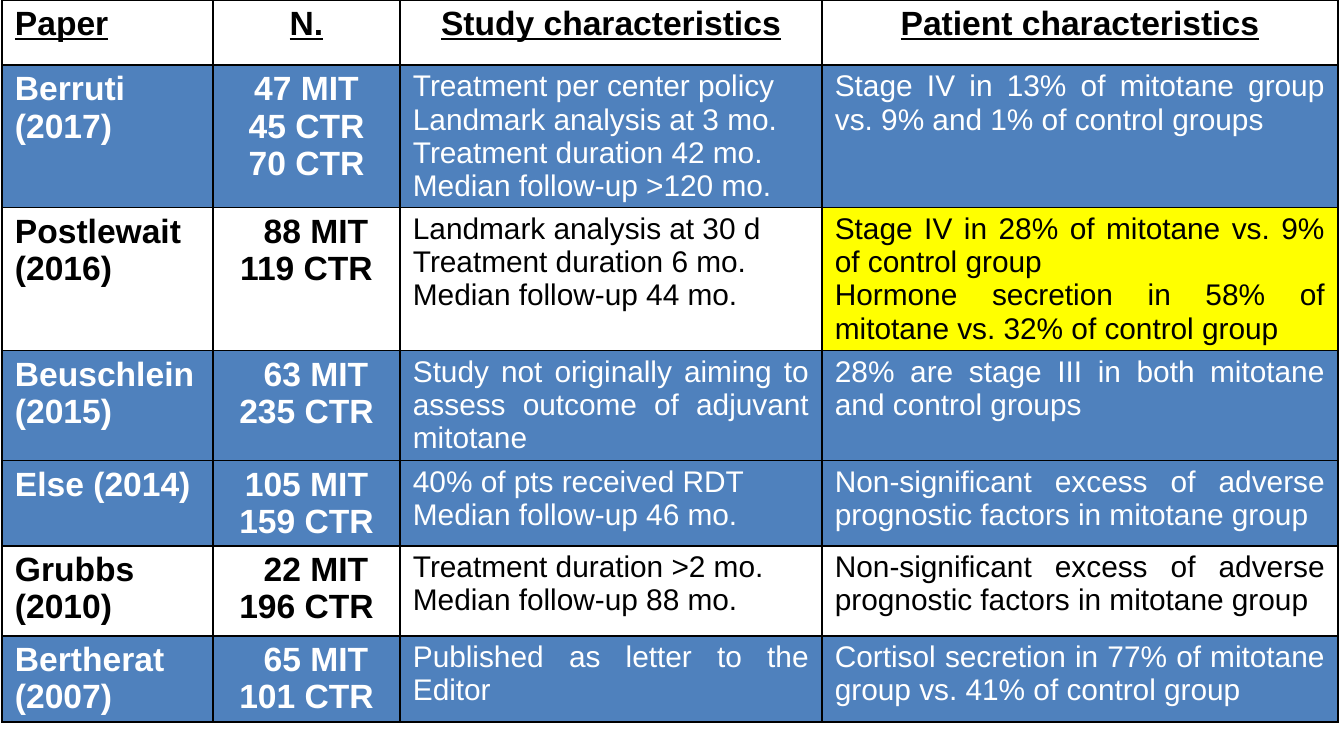
from dataclasses import dataclass

from lxml import etree
from pptx import Presentation
from pptx.dml.color import RGBColor
from pptx.enum.text import PP_ALIGN
from pptx.oxml.ns import qn
from pptx.util import Pt

LEFT, CENTER, JUSTIFY = PP_ALIGN.LEFT, PP_ALIGN.CENTER, PP_ALIGN.JUSTIFY
EMU_PER_PX = 914400 / 134.4
WHITE, BLACK, BLUE, YELLOW = "FFFFFF", "000000", "4F81BD", "FFFF00"
COL_WIDTHS = [211, 187, 422, 516]
ROW_HEIGHTS = [65, 142, 143, 110, 85, 90, 86]
DIGIT_INDENT = 19  # evens out a count that is one digit shorter


@dataclass
class Study:
    paper: str
    counts: list[str]
    design: list[str]
    patients: list[str]
    fill: str = BLUE
    patients_fill: str = BLUE


HEADERS = ["Paper", "N.", "Study characteristics", "Patient characteristics"]
EXCESS = "Non-significant excess of adverse prognostic factors in mitotane group"
STUDIES = [
    Study("Berruti (2017)", ["47 MIT", "45 CTR", "70 CTR"],
          ["Treatment per center policy", "Landmark analysis at 3 mo.",
           "Treatment duration 42 mo.", "Median follow-up >120 mo."],
          ["Stage IV in 13% of mitotane group vs. 9% and 1% of control groups"]),
    Study("Postlewait (2016)", ["88 MIT", "119 CTR"],
          ["Landmark analysis at 30 d", "Treatment duration 6 mo.",
           "Median follow-up 44 mo."],
          ["Stage IV in 28% of mitotane vs. 9% of control group",
           "Hormone secretion in 58% of mitotane vs. 32% of control group"],
          WHITE, YELLOW),
    Study("Beuschlein (2015)", ["63 MIT", "235 CTR"],
          ["Study not originally aiming to assess outcome of adjuvant mitotane"],
          ["28% are stage III in both mitotane and control groups"]),
    Study("Else (2014)", ["105 MIT", "159 CTR"],
          ["40% of pts received RDT", "Median follow-up 46 mo."], [EXCESS]),
    Study("Grubbs (2010)", ["22 MIT", "196 CTR"],
          ["Treatment duration >2 mo.", "Median follow-up 88 mo."], [EXCESS],
          WHITE, WHITE),
    Study("Bertherat (2007)", ["65 MIT", "101 CTR"],
          ["Published as letter to the Editor"],
          ["Cortisol secretion in 77% of mitotane group vs. 41% of control group"]),
]


def px(n: int) -> int:
    return round(n * EMU_PER_PX)


def rgb(color: str) -> RGBColor:
    return RGBColor.from_string(color)


def add_borders(cell) -> None:
    tc_pr = cell._tc.get_or_add_tcPr()
    for side in ("a:lnL", "a:lnR", "a:lnT", "a:lnB"):
        ln = etree.SubElement(tc_pr, qn(side), w=str(Pt(1)))
        fill = etree.SubElement(ln, qn("a:solidFill"))
        etree.SubElement(fill, qn("a:srgbClr"), val=BLACK)


def fill_cell(cell, lines: list[str], fill: str, align, size: int = 18,
              bold: bool = True, underline: bool = False) -> None:
    add_borders(cell)
    cell.fill.solid()
    cell.fill.fore_color.rgb = rgb(fill)
    cell.margin_left = cell.margin_right = px(13)
    cell.margin_top = cell.margin_bottom = px(5)
    tf = cell.text_frame
    tf.text = "\n".join(lines)
    for p in tf.paragraphs:
        p.alignment = align
        for r in p.runs:
            r.font.name = "Arial"
            r.font.size = Pt(size)
            r.font.bold = bold
            r.font.underline = underline
            r.font.color.rgb = rgb(WHITE if fill == BLUE else BLACK)


def indent_counts(cell) -> None:
    digits = [len(p.text.split()[0]) for p in cell.text_frame.paragraphs]
    for p, n in zip(cell.text_frame.paragraphs, digits):
        p._p.get_or_add_pPr().set("marL", str(px(DIGIT_INDENT * (max(digits) - n))))


def main() -> None:
    prs = Presentation()
    prs.slide_width, prs.slide_height = px(1344), px(756)
    s = prs.slides.add_slide(prs.slide_layouts[6])

    # Table grid
    table = s.shapes.add_table(len(ROW_HEIGHTS), len(COL_WIDTHS), px(2), 0,
                               px(sum(COL_WIDTHS)), px(sum(ROW_HEIGHTS))).table
    table.first_row = table.horz_banding = False
    for col, width in zip(table.columns, COL_WIDTHS):
        col.width = px(width)
    for row, height in zip(table.rows, ROW_HEIGHTS):
        row.height = px(height)

    # Header row
    for i, header in enumerate(HEADERS):
        fill_cell(table.cell(0, i), [header], WHITE, CENTER if i else LEFT,
                  underline=True)

    # One row per study
    for i, study in enumerate(STUDIES, start=1):
        paper, counts, design, patients = table.rows[i].cells
        fill_cell(paper, [study.paper], study.fill, LEFT)
        fill_cell(counts, study.counts, study.fill, CENTER)
        indent_counts(counts)
        fill_cell(design, study.design, study.fill, JUSTIFY, 16, False)
        fill_cell(patients, study.patients, study.patients_fill, JUSTIFY, 16, False)

    prs.save("out.pptx")


if __name__ == "__main__":
    main()
